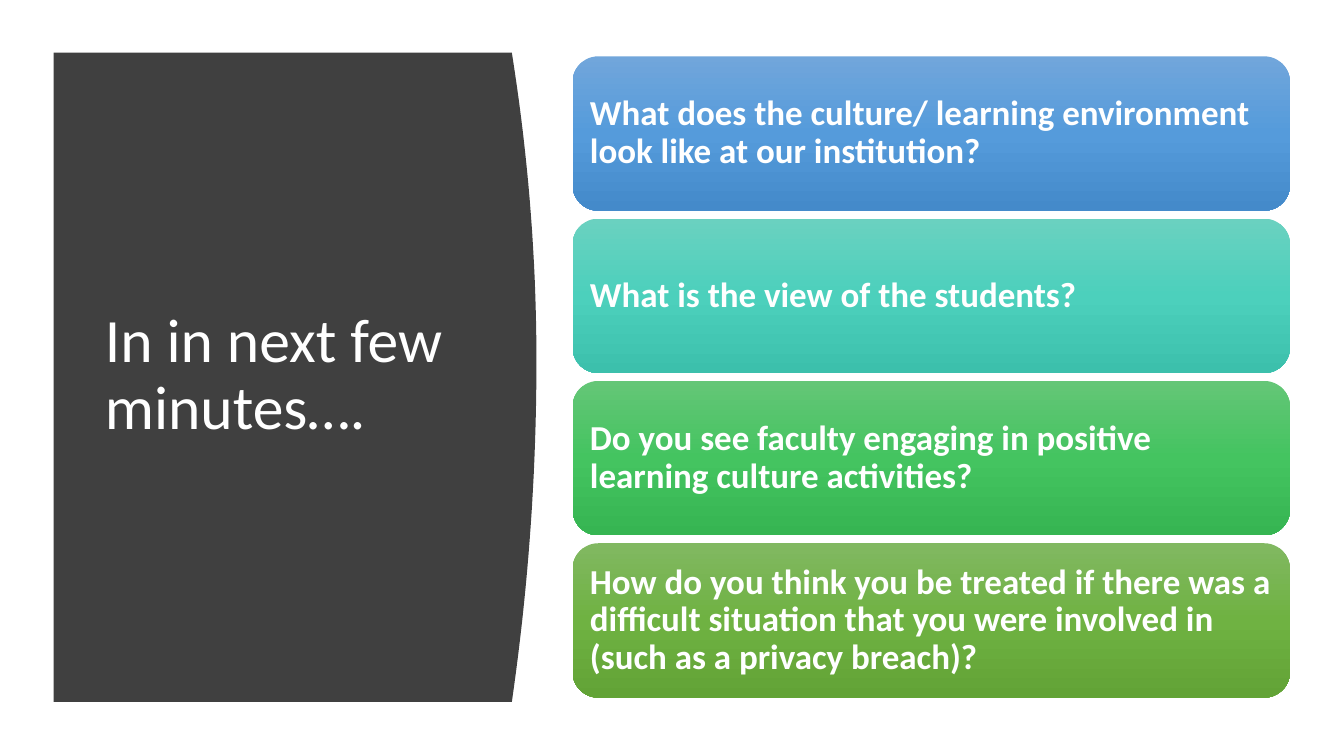
from copy import deepcopy

from pptx import Presentation
from pptx.dml.color import RGBColor
from pptx.enum.shapes import MSO_SHAPE
from pptx.enum.text import MSO_ANCHOR, MSO_AUTO_SIZE, PP_ALIGN
from pptx.util import Cm, Pt

TITLE_ONLY_LAYOUT = 5

QUESTIONS = [
    ("What does the culture/ learning environment look like at our institution?",
     ("71A6DB", "559BDB", "448ACA")),
    ("What is the view of the students?",
     ("6AD1C0", "4CD0BC", "3CC0AC")),
    ("Do you see faculty engaging in positive learning culture activities?",
     ("64C677", "44C460", "36B552")),
    ("How do you think you be treated if there was a difficult situation "
     "that you were involved in (such as a privacy breach)?",
     ("81B861", "6FB242", "62A336")),
]
CARD_LEFT, CARD_TOP, CARD_WIDTH, CARD_HEIGHT = 14.43, 1.42, 18.08, 3.89
CARD_PITCH = 4.09

PANEL_LEFT, PANEL_TOP, PANEL_BOTTOM = 1.35, 1.33, 17.69
PANEL_CORNER, PANEL_BULGE, PANEL_APEX = 12.9, 0.62, 9.1
CURVE_STEPS = 40


def color(hex_value):
    return RGBColor.from_string(hex_value)


def panel_edge(y):
    """Return the x of the panel's bulging right side at height y, in cm."""
    reach = PANEL_APEX - PANEL_TOP if y < PANEL_APEX else PANEL_BOTTOM - PANEL_APEX
    return PANEL_CORNER + PANEL_BULGE * (1 - ((y - PANEL_APEX) / reach) ** 2)


class SlideBuilder:
    font_name = "Calibri"
    text_color = "FFFFFF"
    line_spacing = 0.9

    def __init__(self, slide):
        self.slide = slide

    def set_text(self, shape, text, size, bold=False):
        frame = shape.text_frame
        frame.text = text
        frame.word_wrap = True
        frame.auto_size = MSO_AUTO_SIZE.NONE
        frame.vertical_anchor = MSO_ANCHOR.MIDDLE
        paragraph = frame.paragraphs[0]
        paragraph.alignment = PP_ALIGN.LEFT
        paragraph.line_spacing = self.line_spacing
        paragraph.font.name = self.font_name
        paragraph.font.size = Pt(size)
        paragraph.font.bold = bold
        paragraph.font.color.rgb = color(self.text_color)

    def title(self, text, left, top, width, height, size):
        title = self.slide.shapes.title
        title.left, title.top = Cm(left), Cm(top)
        title.width, title.height = Cm(width), Cm(height)
        self.set_text(title, text, size)

    def panel(self, points, fill):
        """Draw a closed outline behind the title."""
        corners = [(Cm(x), Cm(y)) for x, y in points]
        builder = self.slide.shapes.build_freeform(*corners[0])
        builder.add_line_segments(corners[1:], close=True)
        panel = builder.convert_to_shape()
        panel.shadow.inherit = False
        panel.fill.solid()
        panel.fill.fore_color.rgb = color(fill)
        panel.line.fill.background()
        panel.element.addnext(self.slide.shapes.title.element)

    def card(self, text, gradient, left, top, width, height, size):
        card = self.slide.shapes.add_shape(
            MSO_SHAPE.ROUNDED_RECTANGLE, Cm(left), Cm(top), Cm(width), Cm(height))
        card.shadow.inherit = False
        card.line.fill.background()
        self.fill_gradient(card, gradient)
        frame = card.text_frame
        frame.margin_left = frame.margin_right = Cm(0.25)
        frame.margin_top = frame.margin_bottom = Cm(0.25)
        self.set_text(card, text, size, bold=True)

    def fill_gradient(self, shape, hex_values):
        """Fill from top to bottom with three evenly spaced colours."""
        fill = shape.fill
        fill.gradient()
        fill.gradient_angle = 270
        last_stop = shape.element.xpath(".//a:gs")[-1]
        last_stop.addnext(deepcopy(last_stop))
        for index, stop in enumerate(fill.gradient_stops):
            stop.position = index / (len(hex_values) - 1)
            stop.color.rgb = color(hex_values[index])


def main():
    presentation = Presentation()
    presentation.slide_width, presentation.slide_height = Cm(33.87), Cm(19.05)
    layout = presentation.slide_layouts[TITLE_ONLY_LAYOUT]
    builder = SlideBuilder(presentation.slides.add_slide(layout))

    step = (PANEL_BOTTOM - PANEL_TOP) / CURVE_STEPS
    heights = [PANEL_TOP + step * index for index in range(CURVE_STEPS + 1)]
    curve = [(panel_edge(y), y) for y in heights]
    outline = [(PANEL_LEFT, PANEL_TOP), *curve, (PANEL_LEFT, PANEL_BOTTOM)]
    builder.panel(outline, "404040")
    builder.title("In in next few minutes….", 2.39, 2.82, 9.5, 13.31, 44)

    for row, (question, gradient) in enumerate(QUESTIONS):
        builder.card(question, gradient, CARD_LEFT, CARD_TOP + row * CARD_PITCH,
                     CARD_WIDTH, CARD_HEIGHT, 25)

    presentation.save("out.pptx")


if __name__ == "__main__":
    main()
